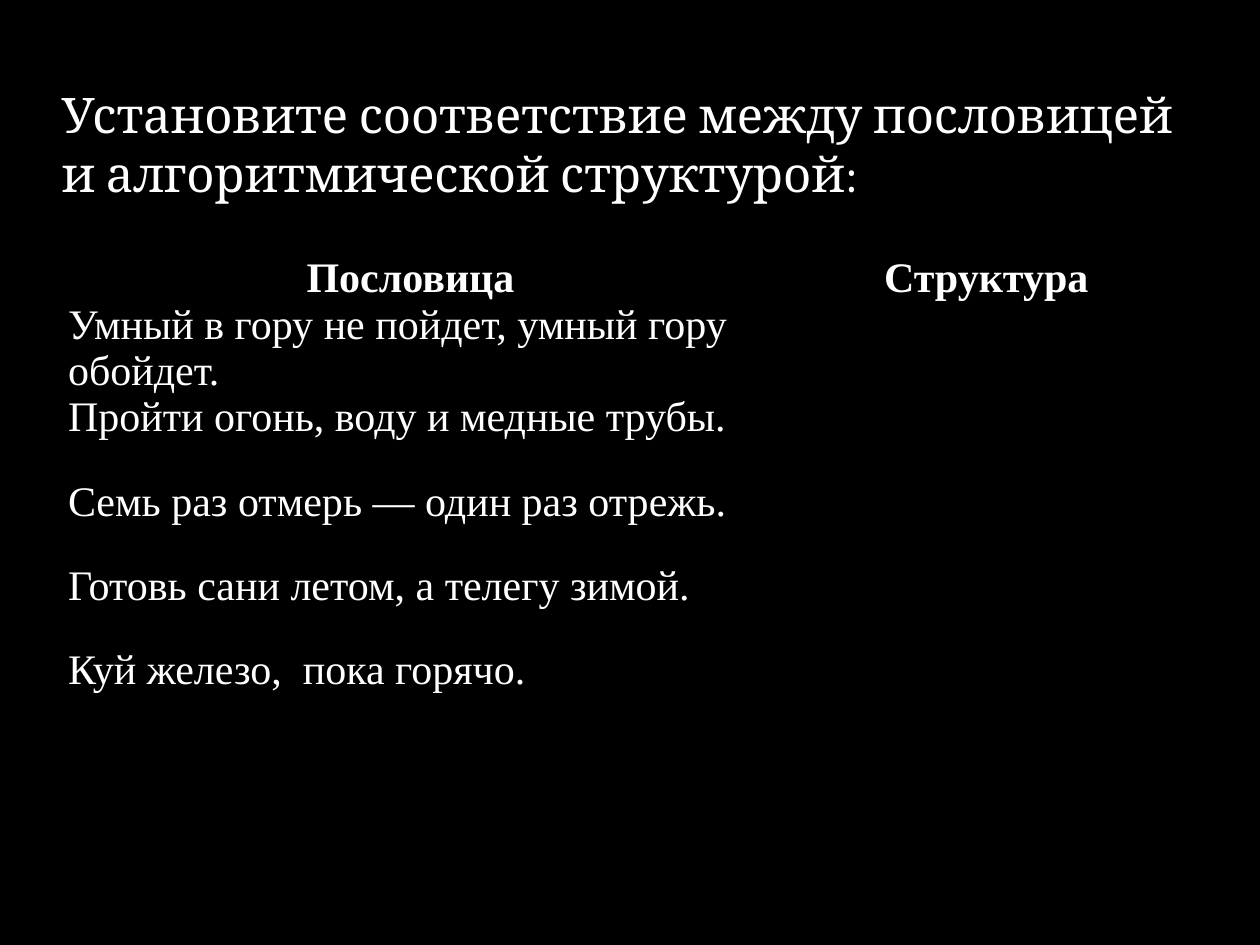
import pptx
import pptx.util
import pptx.dml.color
import pptx.enum.text
import pptx.oxml
import pptx.oxml.ns

BLACK = pptx.dml.color.RGBColor(0, 0, 0)
WHITE = pptx.dml.color.RGBColor(255, 255, 255)
WIDE, HIGH = pptx.util.Inches(10), pptx.util.Inches(7.5)
HEADS = ["Пословица", "Структура"]
LINES = [
    "Умный в гору не пойдет, умный гору обойдет.",
    "Пройти огонь, воду и медные трубы.",
    "Семь раз отмерь — один раз отрежь.",
    "Готовь сани летом, а телегу зимой.",
    "Куй железо,  пока горячо.",
]


def area(left, top, width, height):
    """Turn shares of the slide into a box."""
    return int(left * WIDE), int(top * HIGH), int(width * WIDE), int(height * HIGH)


def style(para, font, size, bold=False):
    """Format the runs of a paragraph."""
    for run in para.runs:
        run.font.name = font
        run.font.size = pptx.util.Pt(size)
        run.font.bold = bold
        run.font.color.rgb = WHITE


def edge(cell):
    """Draw thin borders round a cell, ahead of its fill."""
    props = cell._tc.get_or_add_tcPr()
    for spot, side in enumerate(("lnL", "lnR", "lnT", "lnB")):
        props.insert(spot, pptx.oxml.parse_xml(
            f'<a:{side} {pptx.oxml.ns.nsdecls("a")} w="{pptx.util.Pt(1)}">'
            f'<a:solidFill><a:srgbClr val="{BLACK}"/></a:solidFill></a:{side}>'))


def title(slide, box, text):
    """Place the task heading."""
    frame = slide.shapes.add_textbox(*box).text_frame
    frame.word_wrap = True
    frame.text = text
    style(frame.paragraphs[0], "Cambria", 28)


def fill(cell, text, head):
    """Set the look and wording of one cell."""
    cell.fill.solid()
    cell.fill.fore_color.rgb = BLACK
    edge(cell)
    cell.margin_left = cell.margin_right = pptx.util.Inches(0.07)
    cell.margin_top = cell.margin_bottom = 0
    if text:
        cell.text = text
        para = cell.text_frame.paragraphs[0]
        style(para, "Times New Roman", 24, head)
        if head:
            para.alignment = pptx.enum.text.PP_ALIGN.CENTER


def match(slide, box, heads, lines):
    """Place the table of proverbs, its header half as high as a row."""
    left, top, width, height = box
    rows = [heads] + [[line, ""] for line in lines]
    table = slide.shapes.add_table(len(rows), len(heads), *box).table
    unit = height / (2 * len(lines) + 1)
    for col, share in zip(table.columns, (0.61, 0.39)):
        col.width = int(width * share)
    for r, row in enumerate(rows):
        table.rows[r].height = int(unit * (2 if r else 1))
        for c, text in enumerate(row):
            fill(table.cell(r, c), text, r == 0)


def main():
    """Build and save the slide."""
    deck = pptx.Presentation()
    deck.slide_width, deck.slide_height = WIDE, HIGH
    slide = deck.slides.add_slide(deck.slide_layouts[6])
    slide.background.fill.solid()
    slide.background.fill.fore_color.rgb = BLACK
    match(slide, area(0.047, 0.27, 0.914, 0.49), HEADS, LINES)
    title(slide, area(0.039, 0.083, 0.906, 0.14),
          "Установите соответствие между пословицей и алгоритмической структурой:")
    deck.save("out.pptx")


if __name__ == "__main__":
    main()
